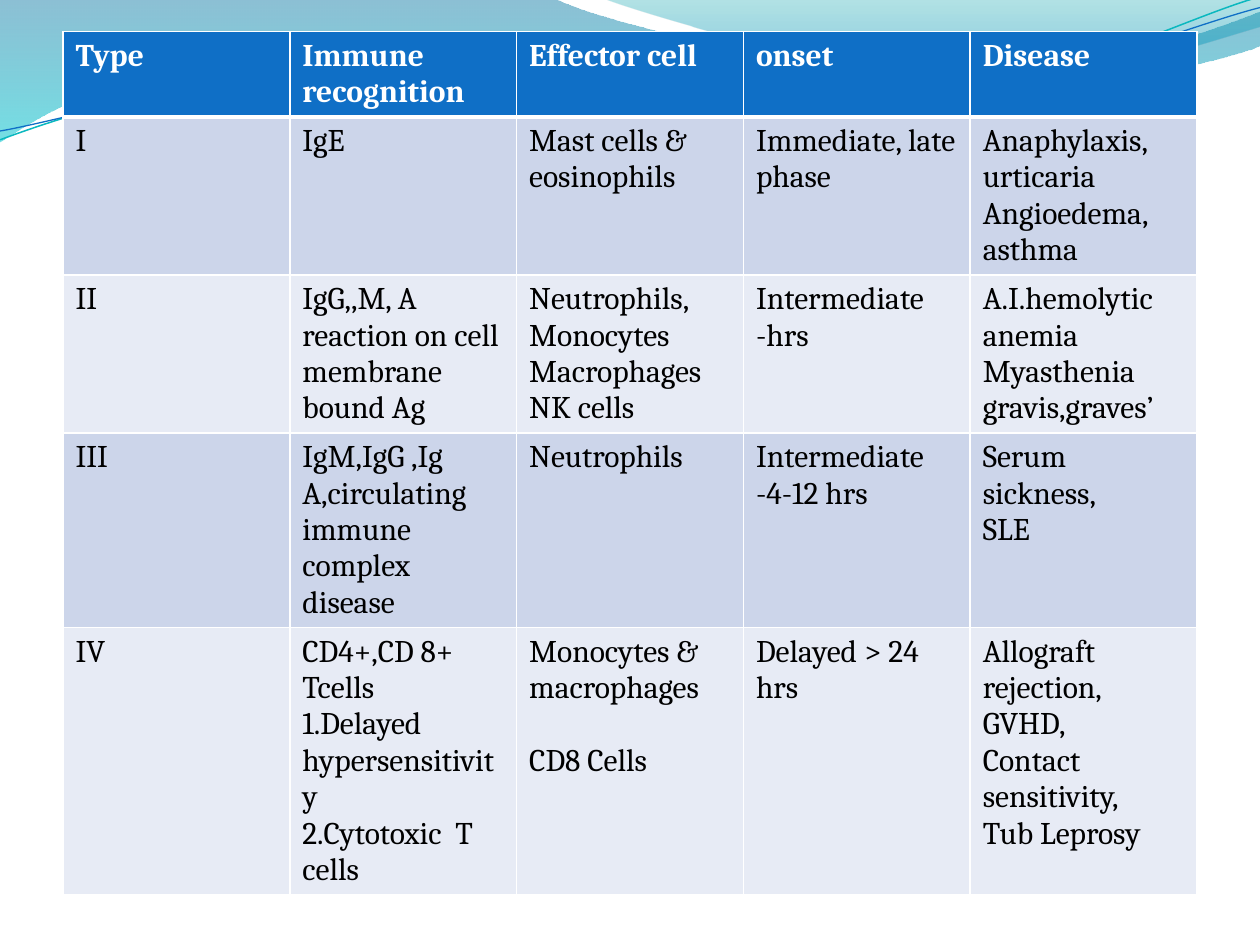
import math

from lxml import etree
from pptx import Presentation
from pptx import util as u
from pptx.dml.color import RGBColor
from pptx.oxml import parse_xml
from pptx.oxml.ns import nsdecls, qn

COLORS = {
    "header": "0F6FC6", "odd": "CCD5EA", "even": "E7EBF5",
    "white": "FFFFFF", "black": "000000",
    "teal": "0AB8BF", "blue": "0F6FC6",
    "deep": "0074A1", "aqua": "00C6CF", "sea": "00A1A9", "sky": "008BBF",
}
FONT = "Cambria"
TILT = 2.7

presentation = Presentation()
presentation.slide_width, presentation.slide_height = u.Inches(10), u.Inches(7.5)
slide = presentation.slides.add_slide(presentation.slide_layouts[6])


def add_wave(start, segments, closed):
    """Draw straight (one point) and Bézier (three points) segments, in inches."""
    anchors = [start] + [segment[-1] for segment in segments]
    emu = [(u.Inches(x), u.Inches(y)) for x, y in anchors]
    builder = slide.shapes.build_freeform(*emu[0])
    builder.add_line_segments(emu[1:], close=closed)
    shape = builder.convert_to_shape()
    shape.shadow.inherit = False

    # Turn the straight pieces that have control points into curves
    left, top = (min(values) for values in zip(*emu))
    straight_pieces = list(shape._element.iter(qn("a:lnTo")))
    for piece, segment in zip(straight_pieces, segments):
        if len(segment) == 3:
            curve = etree.Element(qn("a:cubicBezTo"))
            for x, y in segment:
                etree.SubElement(curve, qn("a:pt"),
                                 x=str(u.Inches(x) - left), y=str(u.Inches(y) - top))
            piece.getparent().replace(piece, curve)
    return shape


def level(point):
    """Turn a point of a tilted strand back to the horizontal."""
    center_x, center_y = 4.99, 0.58
    x, y = point[0] - center_x, point[1] - center_y
    sine, cosine = math.sin(math.radians(TILT)), math.cos(math.radians(TILT))
    return center_x + x * cosine - y * sine, center_y + x * sine + y * cosine


# Translucent waves: start, segments, gradient stops (position, colour, opacity)
bands = [
    ((0, 0),
     [[(4.4, -0.01)],
      [(4.76, 0.17), (6.64, 0.63), (7.58, 0.63)],
      [(8.53, 0.63), (9.58, 0.26), (10, 0.09)],
      [(10.01, 0.36)],
      [(9.83, 0.44), (8.7, 0.76), (7.46, 0.75)],
      [(6.22, 0.75), (3.82, 0.28), (2.57, 0.34)],
      [(1.29, 0.36), (0.46, 0.83), (-0.01, 1.13)]],
     [(0, "deep", 45), (100, "aqua", 55)]),
    ((4.79, -0.01),
     [[(5.09, 0.11), (6.82, 0.62), (7.69, 0.65)],
      [(8.56, 0.69), (9.61, 0.32), (10, 0.21)],
      [(10, 0)]],
     [(0, "sea", 30), (80, "sky", 45)]),
]
for start, segments, stops in bands:
    band = add_wave(start, segments, closed=True)
    band.line.fill.background()
    stop_xml = "".join(
        f'<a:gs pos="{position * 1000}"><a:srgbClr val="{COLORS[color]}">'
        f'<a:alpha val="{opacity * 1000}"/></a:srgbClr></a:gs>'
        for position, color, opacity in stops)
    gradient = parse_xml(
        f'<a:gradFill {nsdecls("a")} rotWithShape="1"><a:gsLst>{stop_xml}</a:gsLst>'
        '<a:lin ang="5400000" scaled="1"/></a:gradFill>')
    band._element.spPr.find(qn("a:custGeom")).addnext(gradient)

# Thin tilted strands
strands = [
    ((0, 1.11),
     [[(0.48, 0.93), (1.58, 0.57), (2.77, 0.52)],
      [(3.95, 0.47), (5.93, 0.89), (7.13, 0.8)],
      [(8.33, 0.71), (9.38, 0.15), (9.98, -0.02)]], "teal", 0.85),
    ((0, 1.04),
     [[(0.47, 0.96), (1.64, 0.61), (2.83, 0.56)],
      [(4.03, 0.51), (5.97, 0.84), (7.17, 0.75)],
      [(8.36, 0.67), (9.41, 0.21), (10, 0.06)]], "blue", 0.75),
]
for start, segments, color, width in strands:
    level_segments = [[level(point) for point in segment] for segment in segments]
    strand = add_wave(level(start), level_segments, closed=False)
    strand.rotation = 360 - TILT
    strand.fill.background()
    strand.line.color.rgb = RGBColor.from_string(COLORS[color])
    strand.line.width = u.Pt(width)

# Hypersensitivity table: a newline starts a paragraph
rows = [
    ["Type", "Immune recognition", "Effector cell", "onset", "Disease"],
    ["I", "IgE", "Mast cells & eosinophils", "Immediate, late phase",
     "Anaphylaxis, urticaria\nAngioedema,\nasthma"],
    ["II", "IgG,,M, A reaction on cell membrane bound Ag",
     "Neutrophils,\nMonocytes\nMacrophages\nNK cells", "Intermediate\n-hrs",
     "A.I.hemolytic anemia\nMyasthenia gravis,graves’"],
    ["III", "IgM,IgG ,Ig A,circulating immune complex disease", "Neutrophils",
     "Intermediate\n-4-12 hrs", "Serum sickness,\nSLE"],
    ["IV", "CD4+,CD 8+ Tcells\n1.Delayed hypersensitivity\n2.Cytotoxic  T cells",
     "Monocytes & macrophages\nCD8 Cells", "Delayed > 24 hrs",
     "Allograft rejection,\nGVHD,\nContact sensitivity,\nTub Leprosy"],
]
row_lines = [2, 4, 4, 5, 7]
row_heights = [u.Inches(0.1 + 0.28 * lines) for lines in row_lines]
table = slide.shapes.add_table(
    len(rows), len(rows[0]),
    int(presentation.slide_width * 0.05), u.Inches(0.25),
    int(presentation.slide_width * 0.9), sum(row_heights)).table

for row_index, row in enumerate(rows):
    table.rows[row_index].height = row_heights[row_index]
    is_header = row_index == 0
    fill = "header" if is_header else "odd" if row_index % 2 else "even"
    for column_index, content in enumerate(row):
        cell = table.cell(row_index, column_index)

        # White rules, heavier under the header
        properties = cell._tc.get_or_add_tcPr()
        for side in "LRTB":
            heavy = (row_index, side) in [(0, "B"), (1, "T")]
            border = etree.SubElement(properties, qn(f"a:ln{side}"), w=str(u.Pt(3 if heavy else 1)))
            solid = etree.SubElement(border, qn("a:solidFill"))
            etree.SubElement(solid, qn("a:srgbClr"), val=COLORS["white"])
        cell.fill.solid()
        cell.fill.fore_color.rgb = RGBColor.from_string(COLORS[fill])

        cell.text_frame.text = content
        for paragraph in cell.text_frame.paragraphs:
            for run in paragraph.runs:
                run.font.name = FONT
                run.font.size = u.Pt(18)
                run.font.bold = is_header
                run.font.color.rgb = RGBColor.from_string(COLORS["white" if is_header else "black"])

# One line of space above the second group of type IV effector cells
table.cell(4, 2).text_frame.paragraphs[1].space_before = u.Pt(21)

presentation.save("out.pptx")
